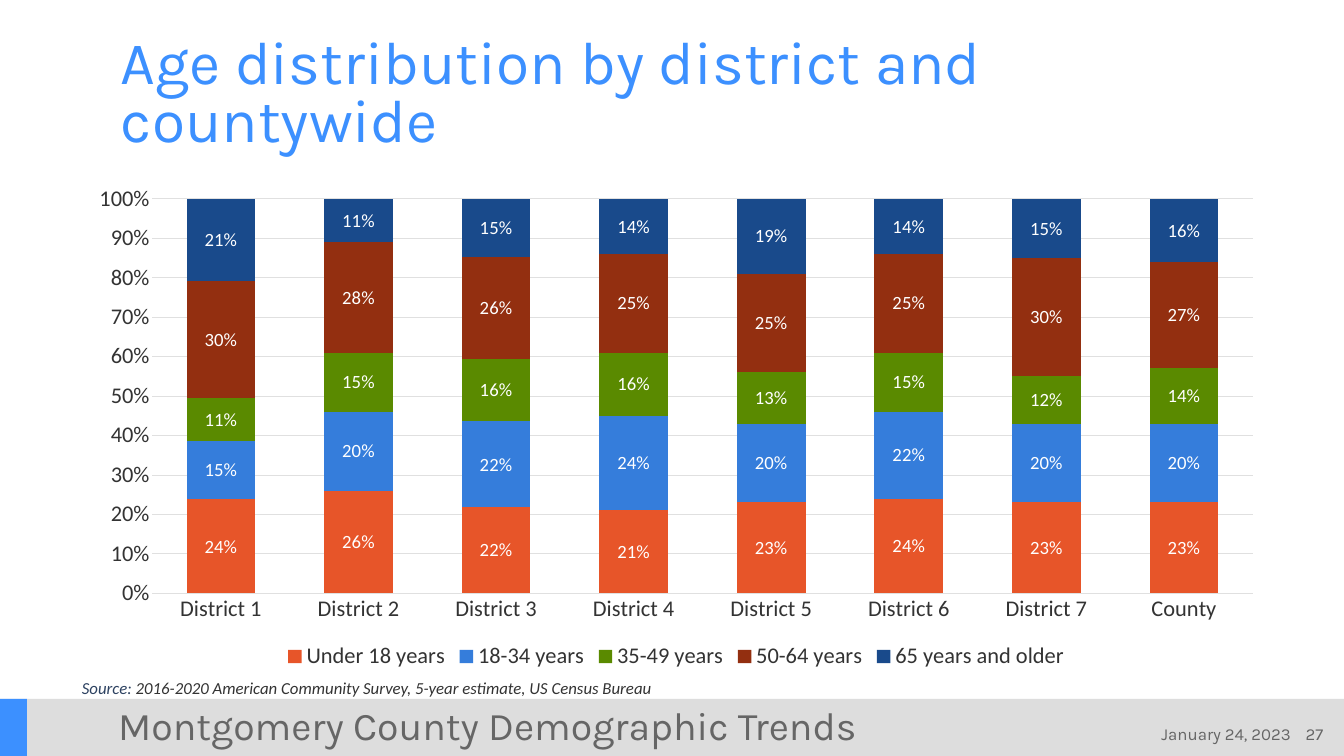
from lxml import etree
from pptx import Presentation
from pptx.chart.data import CategoryChartData
from pptx.dml.color import RGBColor
from pptx.enum.chart import XL_CHART_TYPE, XL_LABEL_POSITION, XL_LEGEND_POSITION, XL_TICK_MARK
from pptx.enum.shapes import MSO_SHAPE
from pptx.enum.text import MSO_ANCHOR, MSO_AUTO_SIZE, PP_ALIGN
from pptx.oxml.ns import qn
from pptx.util import Inches, Pt

RECT = MSO_SHAPE.RECTANGLE
STACK = XL_CHART_TYPE.COLUMN_STACKED_100
CENTER = XL_LABEL_POSITION.CENTER
BELOW = XL_LEGEND_POSITION.BOTTOM
NO_TICK = XL_TICK_MARK.NONE
TOP, MIDDLE, BOTTOM = MSO_ANCHOR.TOP, MSO_ANCHOR.MIDDLE, MSO_ANCHOR.BOTTOM
LEFT, RIGHT = PP_ALIGN.LEFT, PP_ALIGN.RIGHT
HEAD, BODY = "Karla", "Calibri"

COLORS = {
    "blue": "3C90FF", "band": "DDDDDD", "gray": "666666", "text": "333333",
    "grid": "E0E0E0", "navy": "2D4261", "white": "FFFFFF",
}
GROUPS = [
    ("Under 18 years", "E75529", [0.24, 0.26, 0.22, 0.21, 0.23, 0.24, 0.23, 0.23]),
    ("18-34 years", "357DDB", [0.15, 0.20, 0.22, 0.24, 0.20, 0.22, 0.20, 0.20]),
    ("35-49 years", "5A8A00", [0.11, 0.15, 0.16, 0.16, 0.13, 0.15, 0.12, 0.14]),
    ("50-64 years", "932F10", [0.30, 0.28, 0.26, 0.25, 0.25, 0.25, 0.30, 0.27]),
    ("65 years and older", "194A8B", [0.21, 0.11, 0.15, 0.14, 0.19, 0.14, 0.15, 0.16]),
]
PLOT = {"x": 0.064, "y": 0.047, "w": 0.916, "h": 0.79}


def color(name):
    return RGBColor.from_string(COLORS[name])


def set_font(font, face, size, name):
    font.name = face
    font.size = Pt(size)
    font.color.rgb = color(name)


def add_bar(slide, box, name):
    bar = slide.shapes.add_shape(RECT, *map(Inches, box))
    bar.shadow.inherit = False
    bar.fill.solid()
    bar.fill.fore_color.rgb = color(name)
    bar.line.fill.background()


def add_label(slide, box, text, size, anchor, align):
    frame = slide.shapes.add_textbox(*map(Inches, box)).text_frame
    frame.word_wrap = True
    frame.margin_left = frame.margin_right = 0
    frame.margin_top = frame.margin_bottom = 0
    frame.vertical_anchor = anchor
    para = frame.paragraphs[0]
    para.text = text
    para.alignment = align
    set_font(para.font, HEAD, size, "gray")


def add_footer(slide, box):
    left, top, width, height = box
    add_bar(slide, box, "band")
    add_bar(slide, (left, top, 0.4, height), "blue")
    add_label(slide, (left + 1.76, top + 0.09, 14, 0.6),
              "Montgomery County Demographic Trends", 42, MIDDLE, LEFT)
    right = left + width
    add_label(slide, (right - 1.28, top + 0.42, 0.97, 0.25), "27", 18, BOTTOM, RIGHT)
    add_label(slide, (right - 3.6, top + 0.42, 2.81, 0.25),
              "January 24, 2023", 18, BOTTOM, RIGHT)


def set_title(slide, box):
    title = slide.shapes.title
    title.left, title.top, title.width, title.height = map(Inches, box)
    frame = title.text_frame
    frame.text = "Age distribution by district and countywide"
    frame.word_wrap = True
    frame.auto_size = MSO_AUTO_SIZE.NONE
    frame.vertical_anchor = BOTTOM
    frame.margin_left = frame.margin_bottom = 0
    frame.margin_top, frame.margin_right = Inches(0.05), Inches(0.1)
    para = frame.paragraphs[0]
    para.alignment = LEFT
    para.line_spacing = 0.8
    set_font(para.font, HEAD, 64.8, "blue")


def place_plot(chart):
    area = chart.plots[0]._element.getparent()
    for old in area.findall(qn("c:layout")):
        area.remove(old)
    layout = etree.Element(qn("c:layout"))
    area.insert(0, layout)
    manual = etree.SubElement(layout, qn("c:manualLayout"))
    parts = {"layoutTarget": "inner", "xMode": "edge", "yMode": "edge", **PLOT}
    for tag, value in parts.items():
        etree.SubElement(manual, qn("c:" + tag)).set("val", str(value))


def add_ages(slide, box):
    data = CategoryChartData(number_format="0%")
    data.categories = [f"District {n}" for n in range(1, 8)] + ["County"]
    for name, _, values in GROUPS:
        data.add_series(name, values)
    chart = slide.shapes.add_chart(STACK, *map(Inches, box), data).chart
    chart.has_title = False
    set_font(chart.font, BODY, 24, "text")
    chart.has_legend = True
    chart.legend.position = BELOW
    chart.legend.include_in_layout = False
    set_font(chart.legend.font, BODY, 24, "text")

    for axis in (chart.category_axis, chart.value_axis):
        axis.major_tick_mark = axis.minor_tick_mark = NO_TICK
        set_font(axis.tick_labels.font, BODY, 24, "text")
    scale = chart.value_axis
    scale.minimum_scale, scale.maximum_scale, scale.major_unit = 0, 1, 0.1
    scale.tick_labels.number_format = "0%"
    scale.tick_labels.number_format_is_linked = False
    scale.format.line.fill.background()
    for line in (chart.category_axis.format.line, scale.major_gridlines.format.line):
        line.color.rgb = color("grid")
        line.width = Pt(0.75)

    plot = chart.plots[0]
    plot.gap_width = plot.overlap = 100
    plot.vary_by_categories = False
    for series, (_, tint, _) in zip(plot.series, GROUPS):
        series.format.fill.solid()
        series.format.fill.fore_color.rgb = RGBColor.from_string(tint)
        labels = series.data_labels
        labels.show_value = True
        labels.position = CENTER
        labels.number_format = "0%"
        labels.number_format_is_linked = False
        set_font(labels.font, BODY, 20, "white")
    place_plot(chart)


def add_source(slide, box):
    frame = slide.shapes.add_textbox(*map(Inches, box)).text_frame
    frame.word_wrap = True
    frame.vertical_anchor = TOP
    para = frame.paragraphs[0]
    parts = [
        ("Source: ", "navy"),
        ("2016-2020 American Community Survey, 5-year estimate, US Census Bureau", "text"),
    ]
    for text, name in parts:
        run = para.add_run()
        run.text = text
        set_font(run.font, BODY, 18, name)
        run.font.italic = True


def main():
    deck = Presentation()
    deck.slide_width, deck.slide_height = Inches(20), Inches(11.25)
    slide = deck.slides.add_slide(deck.slide_layouts[5])
    add_footer(slide, (0, 10.4, 20, 0.85))
    set_title(slide, (1.8, 0.5, 16.4, 1.8))
    add_ages(slide, (1.12, 2.61, 17.88, 7.43))
    add_source(slide, (1.12, 10.04, 8.88, 0.71))
    deck.save("out.pptx")


if __name__ == "__main__":
    main()
